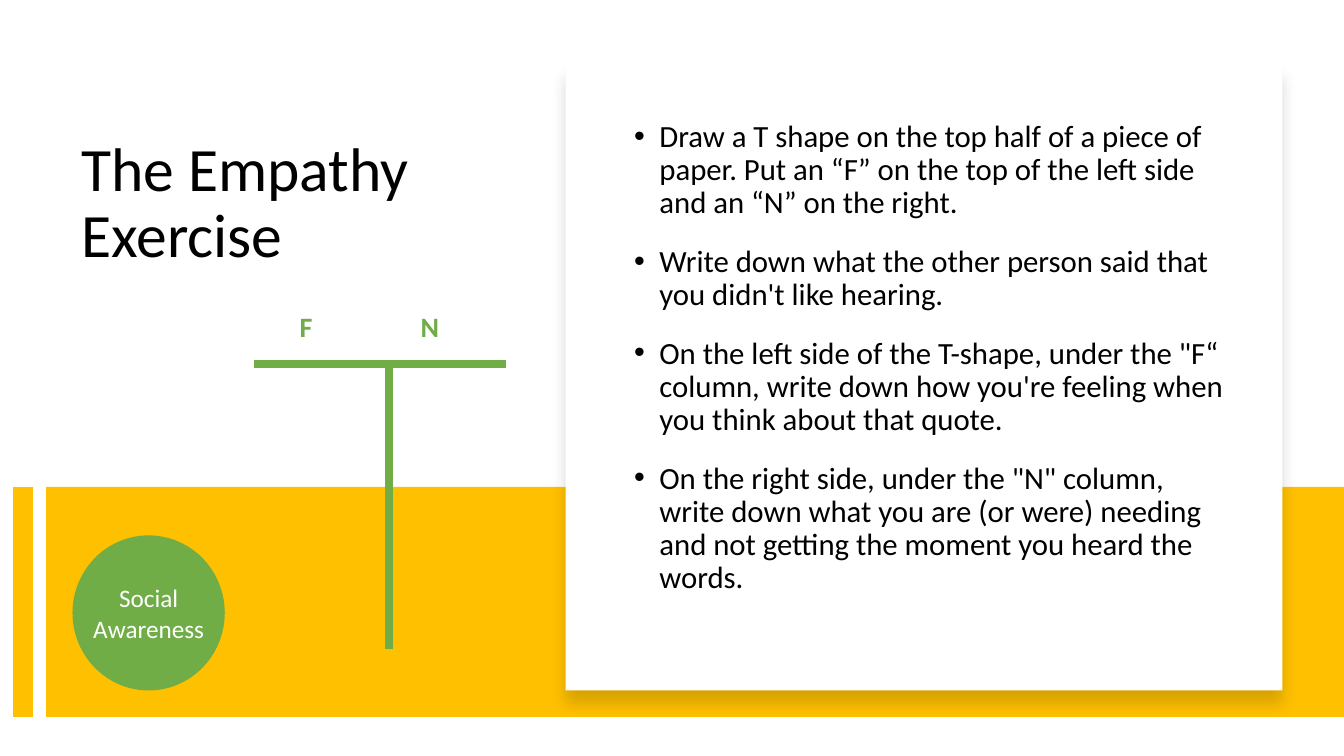
from dataclasses import dataclass

from lxml import etree
from pptx import Presentation, util as u
from pptx.dml.color import RGBColor
from pptx.enum import shapes, text
from pptx.oxml import ns

Pt = u.Pt


@dataclass(frozen=True)
class Theme:
    font: str = "Calibri"
    black: str = "000000"
    white: str = "FFFFFF"
    gold: str = "FFC000"
    green: str = "70AD47"
    title: int = 44
    body: int = 22
    column: int = 20
    badge: int = 18


THEME = Theme()
TITLE = "The Empathy Exercise"
STEPS = [
    "Draw a T shape on the top half of a piece of paper. "
    "Put an “F” on the top of the left side and an “N” on the right.",
    "Write down what the other person said that you didn't like hearing.",
    "On the left side of the T-shape, under the \"F“ column, "
    "write down how you're feeling when you think about that quote.",
    "On the right side, under the \"N\" column, write down what you are "
    "(or were) needing and not getting the moment you heard the words.",
]


def set_all(target, values):
    for name, value in values.items():
        setattr(target, name, value)


def place(part, left, top, width, height):
    set_all(part, dict(left=Pt(left), top=Pt(top), width=Pt(width), height=Pt(height)))


def write(part, lines, size, color, align=text.PP_ALIGN.LEFT, bold=False, **spacing):
    """Fill a text holder with one paragraph per line, all formatted alike."""
    frame = part.text_frame
    set_all(frame, dict(word_wrap=True, auto_size=text.MSO_AUTO_SIZE.NONE,
                        vertical_anchor=text.MSO_ANCHOR.TOP))
    frame.text = "\n".join(lines)
    for paragraph in frame.paragraphs:
        set_all(paragraph, dict(alignment=align, **spacing))
        for run in paragraph.runs:
            set_all(run.font, dict(name=THEME.font, size=Pt(size), bold=bold))
            run.font.color.rgb = RGBColor.from_string(color)


def add_label(slide, box, label, size, color, **format_values):
    holder = slide.shapes.add_textbox(*map(Pt, box))
    write(holder, [label], size, color, text.PP_ALIGN.CENTER, **format_values)


def add_plain(slide, kind, box, color):
    """Add a preset shape with a flat fill, no outline and no shadow."""
    plain = slide.shapes.add_shape(kind, *map(Pt, box))
    plain.shadow.inherit = False
    plain.fill.solid()
    plain.fill.fore_color.rgb = RGBColor.from_string(color)
    plain.line.fill.background()
    return plain


def add_line(slide, start, end, color, width):
    line = slide.shapes.add_connector(shapes.MSO_CONNECTOR.STRAIGHT,
                                      *map(Pt, (*start, *end)))
    line.line.color.rgb = RGBColor.from_string(color)
    line.line.width = Pt(width)
    etree.SubElement(line.element.spPr, ns.qn("a:effectLst"))


def add_band(slide, left, top, width, height):
    """Gold band to the slide edge, with a narrow stripe at its left."""
    stripe_x, gap = left + 7, 16.5
    band_x = stripe_x + gap
    add_plain(slide, shapes.MSO_SHAPE.RECTANGLE,
              (band_x, top, left + width - band_x, height), THEME.gold)
    add_line(slide, (stripe_x, top), (stripe_x, top + height), THEME.gold, 14)


def add_title(slide, left, top, width, height):
    title = slide.shapes.title
    place(title, left, top, width, height)
    write(title, [TITLE], THEME.title, THEME.black, line_spacing=0.9)


def add_steps_card(slide, left, top, width, height):
    """White card with a soft shadow that carries the list of steps."""
    card = add_plain(slide, shapes.MSO_SHAPE.RECTANGLE,
                     (left, top, width, height), THEME.white)
    effects = card.element.spPr.find(ns.qn("a:effectLst"))
    shadow = etree.SubElement(effects, ns.qn("a:outerShdw"), blurRad=str(Pt(11)),
                              dist=str(Pt(10)), dir="5400000", algn="t", rotWithShape="0")
    tint = etree.SubElement(shadow, ns.qn("a:srgbClr"), val=THEME.black)
    etree.SubElement(tint, ns.qn("a:alpha"), val="15000")

    steps = slide.placeholders[1]
    card.element.addnext(steps.element)
    place(steps, left + 41.8, top + 36.7, width - 75.6, height - 54.7)
    write(steps, STEPS, THEME.body, THEME.black,
          line_spacing=0.9, space_before=Pt(18), space_after=Pt(0))
    for paragraph in steps.text_frame.paragraphs:
        properties = paragraph._p.get_or_add_pPr()
        properties.set("marL", str(Pt(18)))
        properties.set("indent", str(Pt(-18)))
        etree.SubElement(properties, ns.qn("a:buFont"), typeface="Arial")
        etree.SubElement(properties, ns.qn("a:buChar"), char="•")


def add_badge(slide, left, top, width, height):
    add_plain(slide, shapes.MSO_SHAPE.OVAL, (left, top, width, height), THEME.green)
    add_label(slide, (left - 4.5, top + 30.2, width + 9, 51),
              "Social Awareness", THEME.badge, THEME.white)


def add_t_chart(slide, left, top, width, height):
    """T shape with a column letter above each arm."""
    label_height, column_width = 32, 88.5
    bar_y, stem_x = top + 42.5, left + 96.5
    add_line(slide, (stem_x, bar_y), (stem_x, top + height), THEME.green, 6)
    add_line(slide, (left, bar_y), (left + width, bar_y), THEME.green, 6)
    for column, letter in enumerate("FN"):
        add_label(slide, (left - 7 + column * column_width, top, column_width, label_height),
                  letter, THEME.column, THEME.green, bold=True)


def main():
    deck = Presentation()
    set_all(deck, dict(slide_width=Pt(960), slide_height=Pt(540)))
    slide = deck.slides.add_slide(deck.slide_layouts[1])
    add_title(slide, 51, 95, 299, 232.5)
    add_band(slide, 9.5, 347.8, 950.5, 164.2)
    add_steps_card(slide, 404, 46, 512, 447.2)
    add_badge(slide, 51.8, 382.4, 108.8, 110.8)
    add_t_chart(slide, 181.4, 217.4, 180, 246.3)
    deck.save("out.pptx")


if __name__ == "__main__":
    main()
